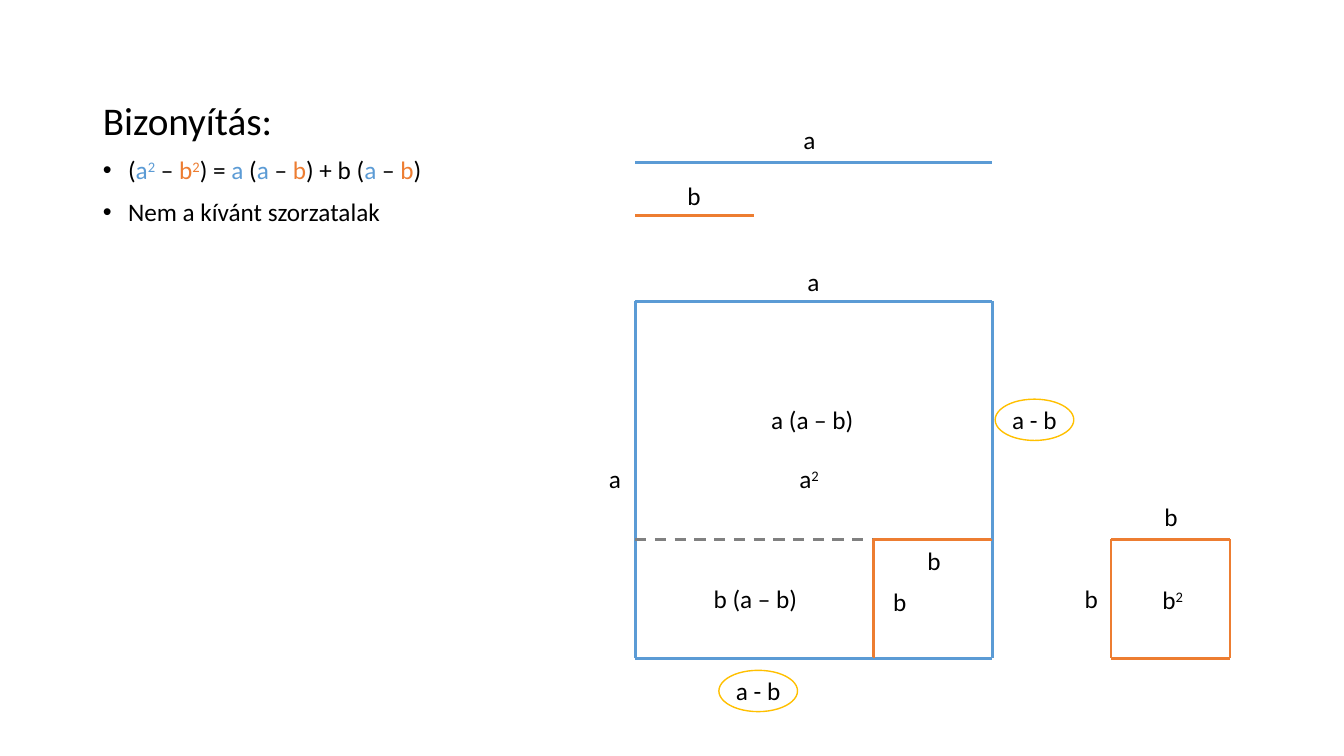
from lxml import etree
from pptx import Presentation
from pptx.dml.color import RGBColor
from pptx.enum.dml import MSO_LINE
from pptx.enum.shapes import MSO_CONNECTOR, MSO_SHAPE
from pptx.enum.text import MSO_AUTO_SIZE
from pptx.oxml.ns import qn
from pptx.util import Pt

PX = 9144  # 100 px to the inch
STRAIGHT = MSO_CONNECTOR.STRAIGHT
OVAL = MSO_SHAPE.OVAL
DASH = MSO_LINE.DASH
GROW = MSO_AUTO_SIZE.SHAPE_TO_FIT_TEXT
FONT = "Calibri"
COLORS = {
    "black": "000000",
    "blue": "5B9BD5",
    "orange": "ED7D31",
    "gray": "808080",
    "gold": "FFC000",
}

A, B = 354, 118  # the two lengths of the proof
LEFT, TOP = 630, 299
RIGHT, BASE = LEFT + A, TOP + A
CUT_X, CUT_Y = RIGHT - B, BASE - B
SMALL = 1102  # left side of the separate b square

FORMULA = [
    ("(", "black"), ("a", "blue"), ("^2", "blue"), (" – ", "black"),
    ("b", "orange"), ("^2", "orange"), (") = ", "black"), ("a", "blue"),
    (" (", "black"), ("a", "blue"), (" – ", "black"), ("b", "orange"),
    (") + b (", "black"), ("a", "blue"), (" – ", "black"),
    ("b", "orange"), (")", "black"),
]


def px(*sizes):
    return [size * PX for size in sizes]


def rgb(name):
    return RGBColor.from_string(COLORS[name])


def add_runs(para, parts, size=18):
    """Add (text, color) runs; a leading ^ raises the text."""
    for text, color in parts:
        run = para.add_run()
        run.text = text.lstrip("^")
        run.font.name = FONT
        run.font.size = Pt(size)
        run.font.color.rgb = rgb(color)
        if text.startswith("^"):
            run.font._element.set("baseline", "30000")


def add_line(shapes, start, end, color, dash=None):
    line = shapes.add_connector(STRAIGHT, *px(*start, *end))
    line.line.color.rgb = rgb(color)
    line.line.width = Pt(2)
    if dash:
        line.line.dash_style = dash
    etree.SubElement(line._element.spPr, qn("a:effectLst"))


def add_label(shapes, left, top, width, *texts):
    frame = shapes.add_textbox(*px(left, top, width, 40)).text_frame
    frame.word_wrap = False
    frame.auto_size = GROW
    add_runs(frame.paragraphs[0], [(text, "black") for text in texts])


def add_square(shapes, left, top, side, color):
    right, base = left + side, top + side
    add_line(shapes, (left, top), (right, top), color)
    add_line(shapes, (left, base), (right, base), color)
    add_line(shapes, (left, top), (left, base), color)
    add_line(shapes, (right, top), (right, base), color)


def add_ring(shapes, left, top):
    """Add the label a - b inside a gold ellipse."""
    add_label(shapes, left + 7, top, 71, "a - b")
    ring = shapes.add_shape(OVAL, *px(left, top, 78, 41))
    ring.shadow.inherit = False
    ring.fill.background()
    ring.line.color.rgb = rgb("gold")
    ring.line.width = Pt(1)


def set_bullet(para, char=None):
    props = para._p.get_or_add_pPr()
    props.set("marL", str(25 * PX if char else 0))
    props.set("indent", str(-25 * PX if char else 0))
    if char:
        font = etree.SubElement(props, qn("a:buFont"))
        font.set("typeface", "Arial")
        etree.SubElement(props, qn("a:buChar")).set("char", char)
    else:
        etree.SubElement(props, qn("a:buNone"))


def fill_body(body):
    body.left, body.top, body.width, body.height = px(92, 96, 1150, 579)
    frame = body.text_frame
    rows = [
        ([("Bizonyítás:", "black")], 28, None),
        (FORMULA, 18, "•"),
        ([("Nem a kívánt szorzatalak", "black")], 18, "•"),
    ]
    for index, (parts, size, char) in enumerate(rows):
        para = frame.add_paragraph() if index else frame.paragraphs[0]
        para.line_spacing = 0.9
        para.space_before = Pt(10)
        set_bullet(para, char)
        add_runs(para, parts, size)


def draw_lengths(shapes):
    add_line(shapes, (LEFT, 161), (RIGHT, 161), "blue")
    add_line(shapes, (LEFT, 214), (LEFT + B, 214), "orange")
    add_label(shapes, 787, 118, 32, "a")
    add_label(shapes, 672, 174, 34, "b")


def draw_large(shapes):
    add_square(shapes, LEFT, TOP, A, "blue")
    add_label(shapes, 783, 455, 41, "a", "^2")
    add_label(shapes, 791, 259, 32, "a")
    add_label(shapes, 594, 455, 32, "a")


def draw_small(shapes):
    add_square(shapes, SMALL, CUT_Y, B, "orange")
    add_label(shapes, 1066, 574, 34, "b")
    add_label(shapes, 1143, 575, 42, "b", "^2")
    add_label(shapes, 1145, 492, 34, "b")


def draw_cut(shapes):
    add_line(shapes, (LEFT, CUT_Y), (CUT_X, CUT_Y), "gray", DASH)
    add_line(shapes, (CUT_X, CUT_Y), (CUT_X, BASE), "orange")
    add_line(shapes, (CUT_X, CUT_Y), (RIGHT, CUT_Y), "orange")
    add_label(shapes, 876, 577, 34, "b")
    add_label(shapes, 910, 536, 34, "b")
    add_line(shapes, (LEFT, BASE), (CUT_X, BASE), "blue")
    add_line(shapes, (RIGHT, TOP), (RIGHT, CUT_Y), "blue")


def main():
    deck = Presentation()
    deck.slide_width, deck.slide_height = px(1333, 750)
    slide = deck.slides.add_slide(deck.slide_layouts[1])
    shapes = slide.shapes
    title = shapes.title._element
    title.getparent().remove(title)
    fill_body(slide.placeholders[1])
    draw_lengths(shapes)
    draw_large(shapes)
    draw_small(shapes.add_group_shape().shapes)
    draw_cut(shapes)
    rings = shapes.add_group_shape().shapes
    add_ring(rings, 987, 396)
    add_ring(rings, 713, 665)
    add_label(shapes, 755, 396, 103, "a (a – b)")
    add_label(shapes, 698, 574, 104, "b (a – b)")
    deck.save("out.pptx")


if __name__ == "__main__":
    main()
